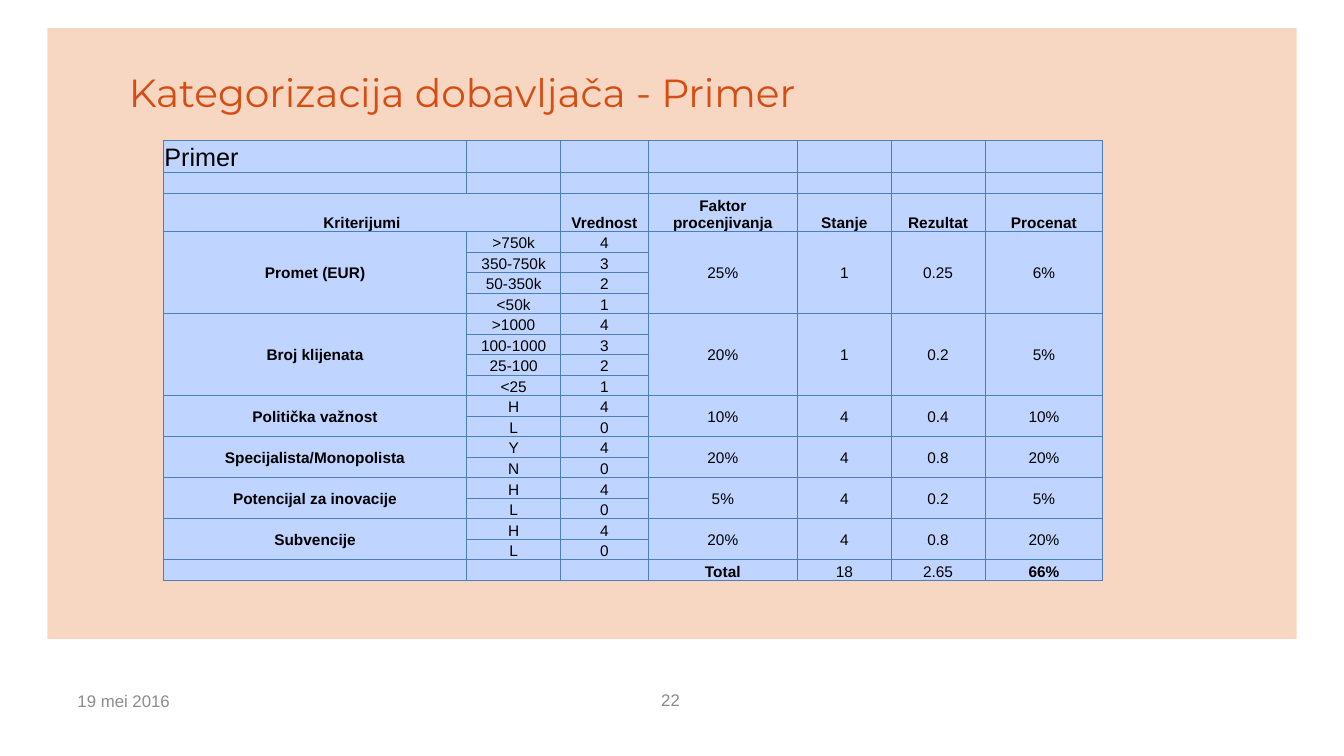
from lxml import etree
from pptx import Presentation
from pptx.dml.color import RGBColor
from pptx.enum.shapes import MSO_SHAPE
from pptx.enum.text import MSO_ANCHOR, PP_ALIGN
from pptx.oxml.ns import qn
from pptx.util import Inches, Pt

RECTANGLE = MSO_SHAPE.RECTANGLE
MIDDLE, BOTTOM = MSO_ANCHOR.MIDDLE, MSO_ANCHOR.BOTTOM
LEFT, CENTER = PP_ALIGN.LEFT, PP_ALIGN.CENTER

COLUMN_WIDTHS = [3.01, 0.93, 0.87, 1.48, 0.93, 0.93, 1.17]
HEADINGS = ["Kriterijumi", "", "Vrednost", "Faktor procenjivanja",
            "Stanje", "Rezultat", "Procenat"]
# Criterion, its (range, value) levels, and its factor, state, result, percentage
CRITERIA = [
    ("Promet (EUR)", [(">750k", "4"), ("350-750k", "3"), ("50-350k", "2"), ("<50k", "1")],
     ["25%", "1", "0.25", "6%"]),
    ("Broj klijenata", [(">1000", "4"), ("100-1000", "3"), ("25-100", "2"), ("<25", "1")],
     ["20%", "1", "0.2", "5%"]),
    ("Politička važnost", [("H", "4"), ("L", "0")], ["10%", "4", "0.4", "10%"]),
    ("Specijalista/Monopolista", [("Y", "4"), ("N", "0")], ["20%", "4", "0.8", "20%"]),
    ("Potencijal za inovacije", [("H", "4"), ("L", "0")], ["5%", "4", "0.2", "5%"]),
    ("Subvencije", [("H", "4"), ("L", "0")], ["20%", "4", "0.8", "20%"]),
]
TOTALS = ["Total", "18", "2.65", "66%"]
LEVEL_COUNT = sum(len(levels) for _, levels, _ in CRITERIA)
FIRST_LEVEL_ROW = 3
TOTAL_ROW = FIRST_LEVEL_ROW + LEVEL_COUNT
ROW_HEIGHTS = [0.32, 0.21, 0.36] + [3.26 / LEVEL_COUNT] * LEVEL_COUNT + [0.21]


def rgb(value):
    return RGBColor.from_string(value)


def write(frame, text, size=11, color="000000", font="Arial", bold=False, align=LEFT):
    paragraph = frame.paragraphs[0]
    paragraph.alignment = align
    run = paragraph.add_run()
    run.text = text
    run.font.size = Pt(size)
    run.font.name = font
    run.font.bold = bold
    run.font.color.rgb = rgb(color)


class SlideBuilder:
    panel_color = "F7D7C1"
    cell_color = "BFD4FF"
    border_color = "4B7EBC"
    border_width = Pt(0.75)

    def __init__(self, slide):
        self.slide = slide

    def panel(self, left, top, width, height):
        panel = self.slide.shapes.add_shape(
            RECTANGLE, Inches(left), Inches(top), Inches(width), Inches(height))
        panel.shadow.inherit = False
        panel.fill.solid()
        panel.fill.fore_color.rgb = rgb(self.panel_color)
        panel.line.fill.background()

    def label(self, text, left, top, width, height, **style):
        frame = self.slide.shapes.add_textbox(
            Inches(left), Inches(top), Inches(width), Inches(height)).text_frame
        frame.word_wrap = True
        frame.vertical_anchor = MIDDLE
        write(frame, text, **style)

    def table(self, left, top, widths, heights):
        table = self.slide.shapes.add_table(
            len(heights), len(widths), Inches(left), Inches(top),
            Inches(sum(widths)), Inches(sum(heights))).table
        table.first_row = table.horz_banding = False
        for column, width in zip(table.columns, widths):
            column.width = Inches(width)
        for row, height in zip(table.rows, heights):
            row.height = Inches(height)
        for cell in table.iter_cells():
            self.style_cell(cell)
        return table

    def style_cell(self, cell):
        cell.margin_left = cell.margin_right = cell.margin_top = Inches(0.01)
        cell.margin_bottom = 0
        properties = cell._tc.get_or_add_tcPr()
        for side in ("a:lnL", "a:lnR", "a:lnT", "a:lnB"):
            border = etree.SubElement(properties, qn(side), w=str(self.border_width))
            fill = etree.SubElement(border, qn("a:solidFill"))
            etree.SubElement(fill, qn("a:srgbClr"), val=self.border_color)
        cell.fill.solid()
        cell.fill.fore_color.rgb = rgb(self.cell_color)
        # Keeps empty cells from stretching their row
        paragraph = cell.text_frame.paragraphs[0]._p
        etree.SubElement(paragraph, qn("a:endParaRPr"), sz="1100")

    def entry(self, cell, text, anchor=BOTTOM, align=CENTER, **style):
        cell.vertical_anchor = anchor
        write(cell.text_frame, text, align=align, **style)


def main():
    presentation = Presentation()
    presentation.slide_width = Inches(13.33)
    presentation.slide_height = Inches(7.5)
    builder = SlideBuilder(presentation.slides.add_slide(presentation.slide_layouts[6]))

    # Background panel, title and footer
    builder.panel(0.47, 0.28, 12.39, 6.06)
    builder.label("22", 6.46, 6.74, 1.16, 0.4, size=12, color="898989")
    builder.label("Kategorizacija dobavljača - Primer", 1.18, 0.44, 11.16, 0.95,
                  size=28, color="D54D13", font="Montserrat")
    builder.label("19 mei 2016", 0.67, 6.75, 3.11, 0.4, size=12, color="8C8C8C")

    # Table heading
    scores = builder.table(1.62, 1.39, COLUMN_WIDTHS, ROW_HEIGHTS)
    builder.entry(scores.cell(0, 0), "Primer", align=LEFT, size=18)
    scores.cell(2, 0).merge(scores.cell(2, 1))
    for column, heading in enumerate(HEADINGS):
        if heading:
            builder.entry(scores.cell(2, column), heading, bold=True)

    # Criteria, each spanning its levels
    row = FIRST_LEVEL_ROW
    for criterion, levels, assessment in CRITERIA:
        last_row = row + len(levels) - 1
        for column, text in [(0, criterion), *enumerate(assessment, 3)]:
            scores.cell(row, column).merge(scores.cell(last_row, column))
            builder.entry(scores.cell(row, column), text, anchor=MIDDLE, bold=column == 0)
        for level_row, level in enumerate(levels, row):
            for column, text in enumerate(level, 1):
                builder.entry(scores.cell(level_row, column), text)
        row = last_row + 1

    # Totals
    for column, total in enumerate(TOTALS, 3):
        builder.entry(scores.cell(TOTAL_ROW, column), total, bold=column in (3, 6))

    presentation.save("out.pptx")


if __name__ == "__main__":
    main()
